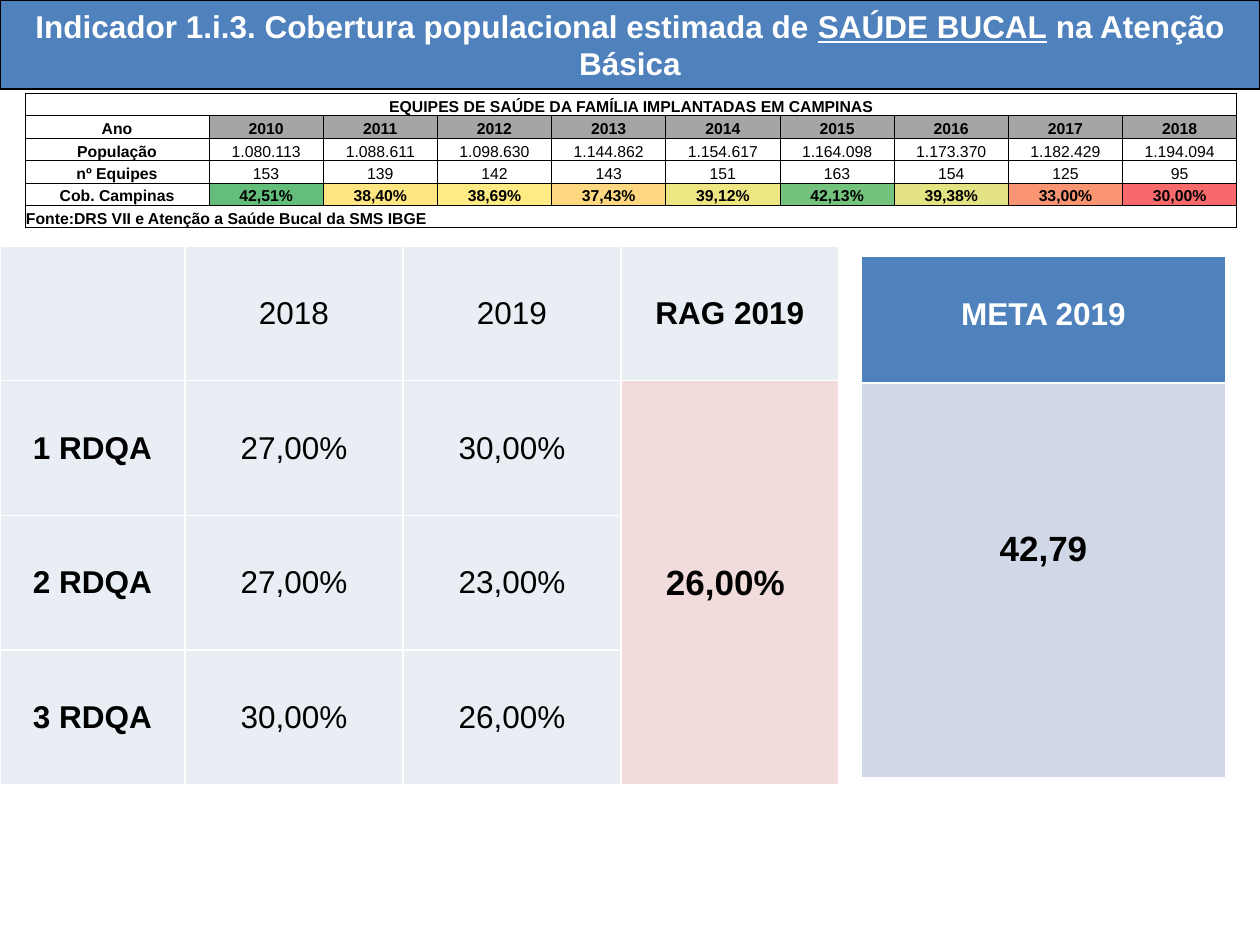
"""Build the oral health coverage slide."""
import pptx
import pptx.dml.color
import pptx.enum.shapes
import pptx.enum.text
import pptx.oxml
import pptx.oxml.ns
import pptx.util

PX = 914400 / 126
ALIGN = pptx.enum.text.PP_ALIGN
ANCHOR = pptx.enum.text.MSO_ANCHOR
COLORS = {
    "blue": "4F81BD", "pale": "E9EDF4", "mist": "D0D8E8", "pink": "F2DCDB",
    "gray": "A5A5A5", "white": "FFFFFF", "black": "000000",
}
HEAT = ["63BE7B", "FEE683", "FFEB84", "FDD880", "EEE683", "73C37C", "E3E383", "FA9573", "F8696B"]
YEARS = [str(year) for year in range(2010, 2019)]
COVERAGE = [
    ["Ano", *YEARS],
    ["População", "1.080.113", "1.088.611", "1.098.630", "1.144.862", "1.154.617",
     "1.164.098", "1.173.370", "1.182.429", "1.194.094"],
    ["nº Equipes", "153", "139", "142", "143", "151", "163", "154", "125", "95"],
    ["Cob. Campinas", "42,51%", "38,40%", "38,69%", "37,43%", "39,12%",
     "42,13%", "39,38%", "33,00%", "30,00%"],
]
RDQA = [
    ["", "2018", "2019", "RAG 2019"],
    ["1 RDQA", "27,00%", "30,00%", "26,00%"],
    ["2 RDQA", "27,00%", "23,00%", ""],
    ["3 RDQA", "30,00%", "26,00%", ""],
]


def emu(px):
    """Turn pixels into EMU."""
    return pptx.util.Emu(round(px * PX))


def rgb(value):
    """Return the colour for a hex string."""
    return pptx.dml.color.RGBColor.from_string(value)


def style_font(font, size, color, bold):
    """Set the face, size, colour and weight of a font."""
    font.name = "Arial"
    font.size = pptx.util.Pt(size)
    font.color.rgb = rgb(color)
    font.bold = bold


def add_grid(s, box, widths, heights):
    """Add a plain table with the given column widths and row heights."""
    frame = s.shapes.add_table(len(heights), len(widths), *map(emu, box))
    table = frame.table
    table.first_row = table.horz_banding = False
    for column, width in zip(table.columns, widths):
        column.width = emu(width)
    for row, height in zip(table.rows, heights):
        row.height = emu(height)
    return table


def add_borders(cell, color, width):
    """Draw a solid line on the four sides of a cell."""
    tc_pr = cell._tc.get_or_add_tcPr()
    for i, side in enumerate("LRTB"):
        tc_pr.insert(i, pptx.oxml.parse_xml(
            f'<a:ln{side} {pptx.oxml.ns.nsdecls("a")} w="{pptx.util.Pt(width)}">'
            f'<a:solidFill><a:srgbClr val="{color}"/></a:solidFill></a:ln{side}>'))


def fill_cell(cell, text, size, bold, fill=None, color=COLORS["black"], line=COLORS["white"],
              line_width=1, anchor=ANCHOR.MIDDLE, margins=(0, 0, 0, 0), align=ALIGN.CENTER):
    """Write and style one cell, with margins as left, top, right, bottom."""
    cell.text = text
    cell.vertical_anchor = anchor
    (cell.margin_left, cell.margin_top,
     cell.margin_right, cell.margin_bottom) = map(emu, margins)
    p = cell.text_frame.paragraphs[0]
    p.alignment = align
    style_font(p.font, size, color, bold)
    if fill:
        cell.fill.solid()
        cell.fill.fore_color.rgb = rgb(fill)
    else:
        cell.fill.background()
    add_borders(cell, line, line_width)


def add_title(s, box):
    """Add the title bar."""
    sp = s.shapes.add_shape(pptx.enum.shapes.MSO_SHAPE.RECTANGLE, *map(emu, box))
    sp.shadow.inherit = False
    sp.fill.solid()
    sp.fill.fore_color.rgb = rgb(COLORS["blue"])
    sp.line.color.rgb = rgb(COLORS["black"])
    sp.line.width = pptx.util.Pt(0.75)
    tf = sp.text_frame
    tf.word_wrap = True
    tf.vertical_anchor = ANCHOR.MIDDLE
    p = tf.paragraphs[0]
    p.alignment = ALIGN.CENTER
    style_font(p.font, 18, COLORS["white"], True)
    for text, underline in [("Indicador 1.i.3. Cobertura populacional estimada de ", False),
                            ("SAÚDE BUCAL", True), (" na Atenção Básica", False)]:
        r = p.add_run()
        r.text = text
        r.font.underline = underline


def add_coverage(s, box):
    """Add the table of teams and coverage by year."""
    blank = [""] * len(YEARS)
    rows = [["EQUIPES DE SAÚDE DA FAMÍLIA IMPLANTADAS EM CAMPINAS", *blank], *COVERAGE,
            ["Fonte:DRS VII e Atenção a Saúde Bucal da SMS IBGE", *blank]]
    label, last = 184, len(rows) - 1
    widths = [label] + [(box[2] - label) / len(YEARS)] * len(YEARS)
    table = add_grid(s, box, widths, [box[3] / len(rows)] * len(rows))
    fills = {1: [COLORS["gray"]] * len(YEARS), 4: HEAT}
    for i, row in enumerate(rows):
        for j, text in enumerate(row):
            fill = fills[i][j - 1] if i in fills and j else None
            fill_cell(table.cell(i, j), text, 9, j == 0 or i in fills, fill,
                      line=COLORS["black"], line_width=0.5, anchor=ANCHOR.BOTTOM,
                      margins=(1, 1, 1, 0), align=ALIGN.LEFT if i == last else ALIGN.CENTER)
    for i in (0, last):
        table.cell(i, 0).merge(table.cell(i, len(YEARS)))


def add_rdqa(s, box):
    """Add the table of results by four-month report."""
    label, last = 185, len(RDQA[0]) - 1
    widths = [label] + [(box[2] - label) / last] * last
    table = add_grid(s, box, widths, [box[3] / len(RDQA)] * len(RDQA))
    for i, row in enumerate(RDQA):
        for j, text in enumerate(row):
            result = i > 0 and j == last
            fill_cell(table.cell(i, j), text, 20 if result else 18, j in (0, last),
                      COLORS["pink" if result else "pale"],
                      margins=(0, 0, 9 if result else 0, 0))
    table.cell(1, last).merge(table.cell(len(RDQA) - 1, last))


def add_target(s, box):
    """Add the table with the target for the year."""
    header = 127
    table = add_grid(s, box, [box[2]], [header, box[3] - header])
    fill_cell(table.cell(0, 0), "META 2019", 18, True, COLORS["blue"], COLORS["white"],
              anchor=ANCHOR.TOP, margins=(13, 41, 13, 6))
    fill_cell(table.cell(1, 0), "42,79", 20, True, COLORS["mist"],
              anchor=ANCHOR.TOP, margins=(13, 147, 13, 6))


def main():
    """Build and save the slide."""
    prs = pptx.Presentation()
    prs.slide_width, prs.slide_height = emu(1260), emu(945)
    s = prs.slides.add_slide(prs.slide_layouts[6])
    add_title(s, (0, 0, 1260, 89))
    add_rdqa(s, (0, 246, 839, 539))
    add_target(s, (861, 256, 365, 522))
    add_coverage(s, (25, 93, 1212, 135))
    prs.save("out.pptx")


if __name__ == "__main__":
    main()
